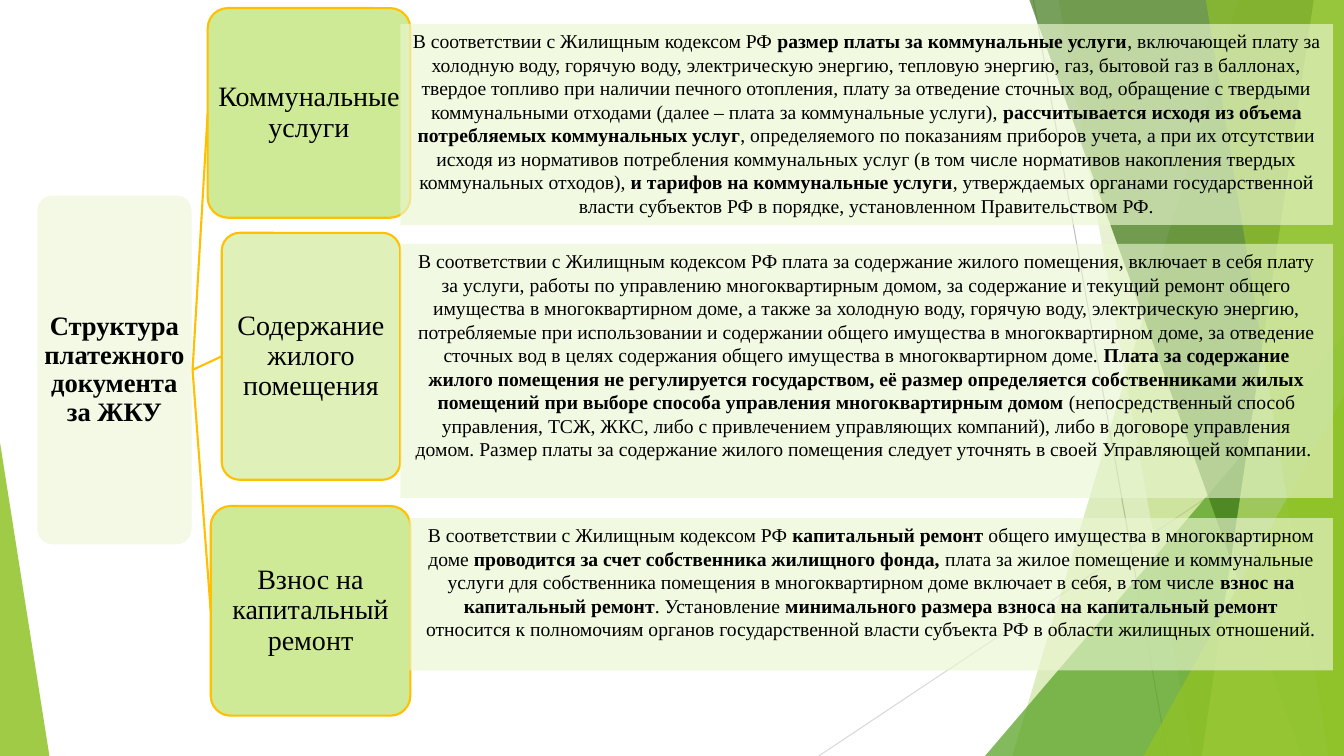
from lxml import etree
from pptx import Presentation
from pptx.dml.color import RGBColor
from pptx.enum.shapes import MSO_CONNECTOR, MSO_SHAPE
from pptx.enum.text import MSO_ANCHOR, MSO_AUTO_SIZE, PP_ALIGN
from pptx.oxml.ns import qn
from pptx.util import Inches, Pt

LINE = MSO_CONNECTOR.STRAIGHT
RECT, ROUND = MSO_SHAPE.RECTANGLE, MSO_SHAPE.ROUNDED_RECTANGLE
WEDGE = MSO_SHAPE.ISOSCELES_TRIANGLE
TOP, MID = MSO_ANCHOR.TOP, MSO_ANCHOR.MIDDLE
CENTER, FIXED = PP_ALIGN.CENTER, MSO_AUTO_SIZE.NONE

WIDE, HIGH = 13.33, 7.5
FONT = "Times New Roman"
COLORS = {
    "lime": "90C226", "green": "54A021", "dark": "3F7819",
    "light": "C0E474", "soft": "D5EDA2", "pale": "EAF6D1",
    "gold": "FFC000", "gray": "BFBFBF", "mist": "D9D9D9",
    "white": "FFFFFF", "black": "000000",
}

RAYS = [((10.25, 0), (11.58, HIGH), "gray"),
        ((WIDE, 4.03), (8.12, HIGH), "mist")]
DECOR = [
    ("band", (12.28, 10.04), "lime", 30),
    ("band", (10.5, 11.83), "lime", 20),
    ("wedge", (9.77, 3.33, 3.56, 4.17, 1), "green", 72),
    ("band", (10.21, 12.91), "dark", 70),
    ("band", (13.03, 11.92), "light", 70),
    ("band", (11.96, 13.18), "lime", 65),
    ("wedge", (11.34, 3.93, 1.99, 3.57, 1), "lime", 80),
    ("wedge", (0, 4.39, 0.49, 3.11, 0), "lime", 85),
]

ROOT = ("Структура платежного документа за ЖКУ", (0.36, 1.93, 1.55, 3.48))
NODES = [
    ("Коммунальные услуги", (2.06, 0.08, 2.01, 2.08), "light"),
    ("Содержание жилого помещения", (2.2, 2.31, 1.77, 2.45), "soft"),
    ("Взнос на капитальный ремонт", (2.09, 5.02, 1.98, 2.08), "light"),
]
PANELS = [
    ((3.97, 0.24, 9.25, 1.99), 66, [
        "В соответствии с Жилищным кодексом РФ ",
        "размер платы за коммунальные услуги",
        ", включающей плату за холодную воду, горячую воду, электрическую энергию, тепловую энергию, газ, "
        "бытовой газ в баллонах, твердое топливо при наличии печного отопления, плату за отведение сточных вод, "
        "обращение с твердыми коммунальными отходами (далее – плата за коммунальные услуги), ",
        "рассчитывается исходя из объема потребляемых коммунальных услуг",
        ", определяемого по показаниям приборов учета, а при их отсутствии исходя из нормативов потребления "
        "коммунальных услуг (в том числе нормативов накопления твердых коммунальных отходов), ",
        "и тарифов на коммунальные услуги",
        ", утверждаемых органами государственной власти субъектов РФ в порядке, установленном Правительством РФ.",
    ]),
    ((3.97, 2.42, 9.25, 2.52), 61, [
        "В соответствии с Жилищным кодексом РФ плата за содержание жилого помещения, включает в себя плату "
        "за услуги, работы по управлению многоквартирным домом, за содержание и текущий ремонт общего имущества "
        "в многоквартирном доме, а также за холодную воду, горячую воду, электрическую энергию, потребляемые при "
        "использовании и содержании общего имущества в многоквартирном доме, за отведение сточных вод в целях "
        "содержания общего имущества в многоквартирном доме. ",
        "Плата за содержание жилого помещения не регулируется государством, её размер определяется "
        "собственниками жилых помещений при выборе способа управления многоквартирным домом",
        " (непосредственный способ управления, ТСЖ, ЖКС, либо с привлечением управляющих компаний), либо в "
        "договоре управления домом. Размер платы за содержание жилого помещения следует уточнять в своей "
        "Управляющей компании. ",
    ]),
    ((4.06, 5.14, 9.16, 1.51), 65, [
        "В соответствии с Жилищным кодексом РФ ",
        "капитальный ремонт ",
        "общего имущества в многоквартирном доме ",
        "проводится за счет собственника жилищного фонда, ",
        "плата за жилое помещение и коммунальные услуги для собственника помещения в многоквартирном доме "
        "включает в себя, в том числе ",
        "взнос на капитальный ремонт",
        ". Установление ",
        "минимального размера взноса на капитальный ремонт ",
        "относится к полномочиям органов государственной власти субъекта РФ в области жилищных отношений.",
    ]),
]


def tint(name):
    return RGBColor.from_string(COLORS[name])


def assign(item, values):
    for name, value in values.items():
        setattr(item, name, value)


def paint(shape, color, alpha, edge=None):
    shape.shadow.inherit = False
    shape.fill.solid()
    shape.fill.fore_color.rgb = tint(color)
    clr = shape.element.spPr.find(qn("a:solidFill"))[0]
    etree.SubElement(clr, qn("a:alpha")).set("val", str(alpha * 1000))
    if edge:
        shape.line.color.rgb = tint(edge)
        shape.line.width = Pt(1.5)
    else:
        shape.line.fill.background()


def box(kind, area, color, alpha, edge=None):
    shape = shapes.add_shape(kind, *map(Inches, area))
    paint(shape, color, alpha, edge)
    if kind == ROUND:
        shape.adjustments[0] = 0.1
    return shape


def link(start, end, color, width):
    line = shapes.add_connector(LINE, *map(Inches, start + end))
    line.line.color.rgb = tint(color)
    line.line.width = Pt(width)
    etree.SubElement(line.element.spPr, qn("a:effectLst"))


def band(top, foot):
    pen = shapes.build_freeform(Inches(top), 0)
    points = [(WIDE, 0), (WIDE, HIGH), (foot, HIGH)]
    pen.add_line_segments([(Inches(x), Inches(y)) for x, y in points])
    return pen.convert_to_shape()


def wedge(x, y, w, h, tip):
    shape = shapes.add_shape(WEDGE, *map(Inches, (x, y, w, h)))
    shape.adjustments[0] = tip
    return shape


def write(shape, parts, size, anchor, pads, space=1.0, bold=False):
    frame = shape.text_frame
    side, edge = map(Inches, pads)
    assign(frame, {"word_wrap": True, "auto_size": FIXED, "vertical_anchor": anchor,
                   "margin_left": side, "margin_right": side,
                   "margin_top": edge, "margin_bottom": edge})
    para = frame.paragraphs[0]
    assign(para, {"alignment": CENTER, "line_spacing": space})
    for i, part in enumerate(parts):
        run = para.add_run()
        run.text = part
        assign(run.font, {"name": FONT, "size": Pt(size), "bold": bold or i % 2 == 1})
        run.font.color.rgb = tint("black")


deck = Presentation()
assign(deck, {"slide_width": Inches(WIDE), "slide_height": Inches(HIGH)})
slide = deck.slides.add_slide(deck.slide_layouts[5])
shapes = slide.shapes

for start, end, color in RAYS:
    link(start, end, color, 0.75)
for kind, args, color, alpha in DECOR:
    paint(band(*args) if kind == "band" else wedge(*args), color, alpha)

text, area = ROOT
x, y, w, h = area
box(ROUND, area, "pale", 57, "white")
title = shapes.title
inset = 0.05
assign(title, {"left": Inches(x + inset), "top": Inches(y + inset),
               "width": Inches(w - 2 * inset), "height": Inches(h - 2 * inset)})
write(title, [text], 19, MID, (0.01, 0.01), 0.9, True)
title.element.getparent().append(title.element)

hub = (x + w, y + h / 2)
for text, area, color in NODES:
    x, y, w, h = area
    link(hub, (x, y + h / 2), "gold", 1.5)
    write(box(ROUND, area, color, 75, "gold"), [text], 20, MID, (0.01, 0.01), 0.9)

for area, alpha, parts in PANELS:
    write(box(RECT, area, "pale", alpha), parts, 14, TOP, (0.1, 0.05))

deck.save("out.pptx")
